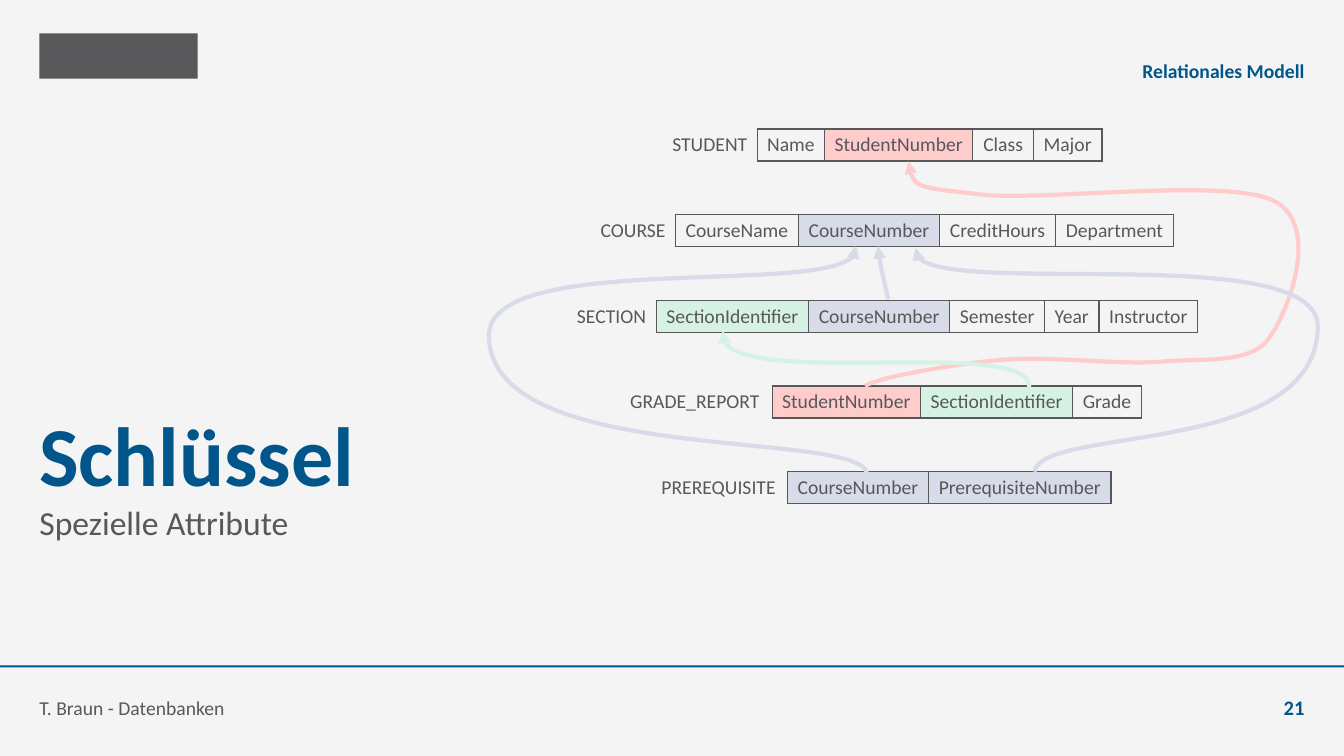
from dataclasses import dataclass

from lxml import etree
from pptx import Presentation
from pptx.dml.color import RGBColor
from pptx.enum.shapes import MSO_SHAPE
from pptx.enum.text import MSO_ANCHOR, MSO_AUTO_SIZE, PP_ALIGN
from pptx.oxml.ns import qn
from pptx.util import Inches, Pt

RECT = MSO_SHAPE.RECTANGLE
TOP, BOTTOM = MSO_ANCHOR.TOP, MSO_ANCHOR.BOTTOM
LEFT, CENTER, RIGHT = PP_ALIGN.LEFT, PP_ALIGN.CENTER, PP_ALIGN.RIGHT
NO_FIT = MSO_AUTO_SIZE.NONE


@dataclass(frozen=True)
class Theme:
    font: str = "Calibri"
    paper: str = "F4F4F4"
    blue: str = "00568A"
    gray: str = "58585A"
    red: str = "FFCCCC"
    lilac: str = "D8DBE8"
    green: str = "D6F2E4"
    head: float = 59.9
    sub: float = 24
    page: float = 14.7
    text: float = 14


THEME = Theme()

# name, left, label alignment, label width, fields (text, width, fill)
TABLES = [
    ("STUDENT", 1.72, CENTER, 0.94, [
        ("Name", 0.67, None), ("StudentNumber", 1.47, THEME.red),
        ("Class", 0.6, None), ("Major", 0.68, None)]),
    ("COURSE", 1.01, CENTER, 0.84, [
        ("CourseName", 1.22, None), ("CourseNumber", 1.4, THEME.lilac),
        ("CreditHours", 1.15, None), ("Department", 1.17, None)]),
    ("SECTION", 0.77, CENTER, 0.89, [
        ("SectionIdentifier", 1.51, THEME.green),
        ("CourseNumber", 1.4, THEME.lilac), ("Semester", 0.94, None),
        ("Year", 0.54, None), ("Instructor", 0.98, None)]),
    ("GRADE_REPORT", 1.32, LEFT, 1.49, [
        ("StudentNumber", 1.47, THEME.red),
        ("SectionIdentifier", 1.51, THEME.green), ("Grade", 0.68, None)]),
    ("PREREQUISITE", 1.63, LEFT, 1.33, [
        ("CourseNumber", 1.4, THEME.lilac),
        ("PrerequisiteNumber", 1.81, THEME.lilac)]),
]

# colour, then a start point and three Bézier points per curve
LINKS = [
    (THEME.red, [
        (3.73, 2.55), (3.83, 2.47), (4.61, 2.33), (5.09, 2.29), (5.58, 2.25),
        (6.21, 2.34), (6.65, 2.31), (7.09, 2.27), (7.56, 2.34), (7.74, 2.07),
        (7.93, 1.81), (8.26, 0.95), (7.78, 0.71), (7.3, 0.48), (5.48, 0.72),
        (4.88, 0.65), (4.27, 0.58), (4.19, 0.58), (4.16, 0.32)]),
    (THEME.lilac, [(3.96, 1.69), (3.91, 1.47), (3.86, 1.26), (3.86, 1.16)]),
    (THEME.lilac, [
        (3.75, 3.42), (3.68, 2.97), (0.02, 3.36), (0, 2.06),
        (-0.03, 1.2), (3.76, 1.72), (3.64, 1.16)]),
    (THEME.lilac, [
        (5.41, 3.4), (5.48, 2.94), (8.2, 3.26), (8.22, 1.97),
        (8.25, 1.1), (4.11, 1.74), (4.23, 1.18)]),
    (THEME.green, [(5.36, 2.56), (5.37, 2.06), (2.2, 2.63), (2.32, 2)]),
]


def rgb(color):
    return RGBColor.from_string(color)


def style(para, size, color, bold=False, align=LEFT):
    para.alignment = align
    for run in para.runs:
        font = run.font
        font.name, font.size, font.bold = THEME.font, Pt(size), bold
        font.color.rgb = rgb(color)


def write(shape, box, text, size, color, bold=False, align=LEFT, anchor=BOTTOM):
    """Place a text shape in its box, without insets, and fill it."""
    shape.left, shape.top, shape.width, shape.height = map(Inches, box)
    frame = shape.text_frame
    frame.text = text
    frame.word_wrap, frame.auto_size = True, NO_FIT
    frame.vertical_anchor = anchor
    frame.margin_left = frame.margin_right = 0
    frame.margin_top = frame.margin_bottom = 0
    style(frame.paragraphs[0], size, color, bold, align)
    return frame.paragraphs[0]


def label(slide, box, *args, **kwargs):
    shape = slide.shapes.add_textbox(*map(Inches, box))
    write(shape, box, *args, **kwargs)


def bar(slide, box, color):
    shape = slide.shapes.add_shape(RECT, *map(Inches, box))
    shape.shadow.inherit = False
    shape.fill.solid()
    shape.fill.fore_color.rgb = rgb(color)
    shape.line.fill.background()


def header(slide, box):
    x, y, width, height = box
    bar(slide, (x, y, 1.57, 0.45), THEME.gray)
    label(slide, (x + 3.54, y + 0.1, width - 3.54, height - 0.1),
          "Relationales Modell", THEME.text, THEME.blue, True, RIGHT)


def footer(slide, box):
    x, y, width, height = box
    bar(slide, (0, y, 13.33, 0.02), THEME.blue)
    label(slide, (x, y + 0.15, 9.2, height - 0.15),
          "T. Braun - Datenbanken", THEME.text, THEME.gray)
    label(slide, (x + width - 0.79, y + 0.15, 0.79, height - 0.15),
          "21", THEME.page, THEME.blue, True, RIGHT)


def heading(slide, box):
    x, y, width, height = box
    title, body = slide.placeholders
    write(title, (x, y, width, 3.12), "Schlüssel", THEME.head, THEME.blue, True)
    para = write(body, (x, y + 3.15, width, height - 3.15),
                 "Spezielle Attribute", THEME.sub, THEME.gray, anchor=TOP)
    para.line_spacing, para.space_before = 0.9, Pt(5)
    props = para._p.get_or_add_pPr()
    props.set("marL", "0")
    props.set("indent", "0")
    etree.SubElement(props, qn("a:buNone"))


def border(cell, sides):
    """Draw the given sides (of L, R, T, B) and clear the others."""
    props = cell._tc.get_or_add_tcPr()
    for side in "LRTB":
        line = etree.SubElement(props, qn("a:ln" + side), w=str(Pt(1)))
        if side in sides:
            fill = etree.SubElement(line, qn("a:solidFill"))
            etree.SubElement(fill, qn("a:srgbClr"), val=THEME.gray)
        else:
            etree.SubElement(line, qn("a:noFill"))


def schema(slide, x, y, name, align, width, fields):
    """One relation: its name, then a row of bordered fields."""
    cells = [(name, width, None), *fields]
    total = sum(cell[1] for cell in cells)
    frame = slide.shapes.add_table(
        1, len(cells), Inches(x), Inches(y), Inches(total), Inches(0.31))
    table = frame.table
    table.first_row = table.horz_banding = False
    for i, (text, wide, color) in enumerate(cells):
        table.columns[i].width = Inches(wide)
        cell = table.cell(0, i)
        cell.text = text
        cell.margin_left = cell.margin_right = Inches(0.08)
        cell.margin_top = cell.margin_bottom = Inches(0.04)
        style(cell.text_frame.paragraphs[0], THEME.text, THEME.gray,
              align=CENTER if i else align)
        border(cell, "LRTB" if i else "R")
        if color:
            cell.fill.solid()
            cell.fill.fore_color.rgb = rgb(color)
        else:
            cell.fill.background()


def link(slide, x, y, color, points):
    """A curved arrow through Bézier points, with its head at the end."""
    start, *rest = [(Inches(x + a), Inches(y + b)) for a, b in points]
    pen = slide.shapes.build_freeform(*start)
    pen.add_line_segments(rest, close=False)
    shape = pen.convert_to_shape()
    shape.shadow.inherit = False
    shape.fill.background()
    shape.line.width = Pt(3)
    shape.line.color.rgb = rgb(color)
    etree.SubElement(shape.line._get_or_add_ln(), qn("a:tailEnd"), type="triangle")
    steps = shape._element.xpath(".//a:lnTo")
    for i in range(0, len(steps), 3):
        first, *more = steps[i:i + 3]
        curve = etree.Element(qn("a:cubicBezTo"))
        first.addprevious(curve)
        for step in (first, *more):
            curve.append(step[0])
            step.getparent().remove(step)


def diagram(slide, box):
    x, y, _, height = box
    pitch = (height - 0.31) / (len(TABLES) - 1)
    for i, (name, left, *rest) in enumerate(TABLES):
        schema(slide, x + left, y + i * pitch, name, *rest)
    for color, points in LINKS:
        link(slide, x, y, color, points)


def main():
    deck = Presentation()
    deck.slide_width, deck.slide_height = Inches(13.33), Inches(7.5)
    slide = deck.slides.add_slide(deck.slide_layouts[1])
    slide.background.fill.solid()
    slide.background.fill.fore_color.rgb = rgb(THEME.paper)
    header(slide, (0.39, 0.33, 12.55, 0.49))
    footer(slide, (0.39, 6.6, 12.55, 0.54))
    heading(slide, (0.39, 1.87, 12.02, 4.59))
    diagram(slide, (4.85, 1.28, 8.22, 3.71))
    deck.save("out.pptx")


if __name__ == "__main__":
    main()
